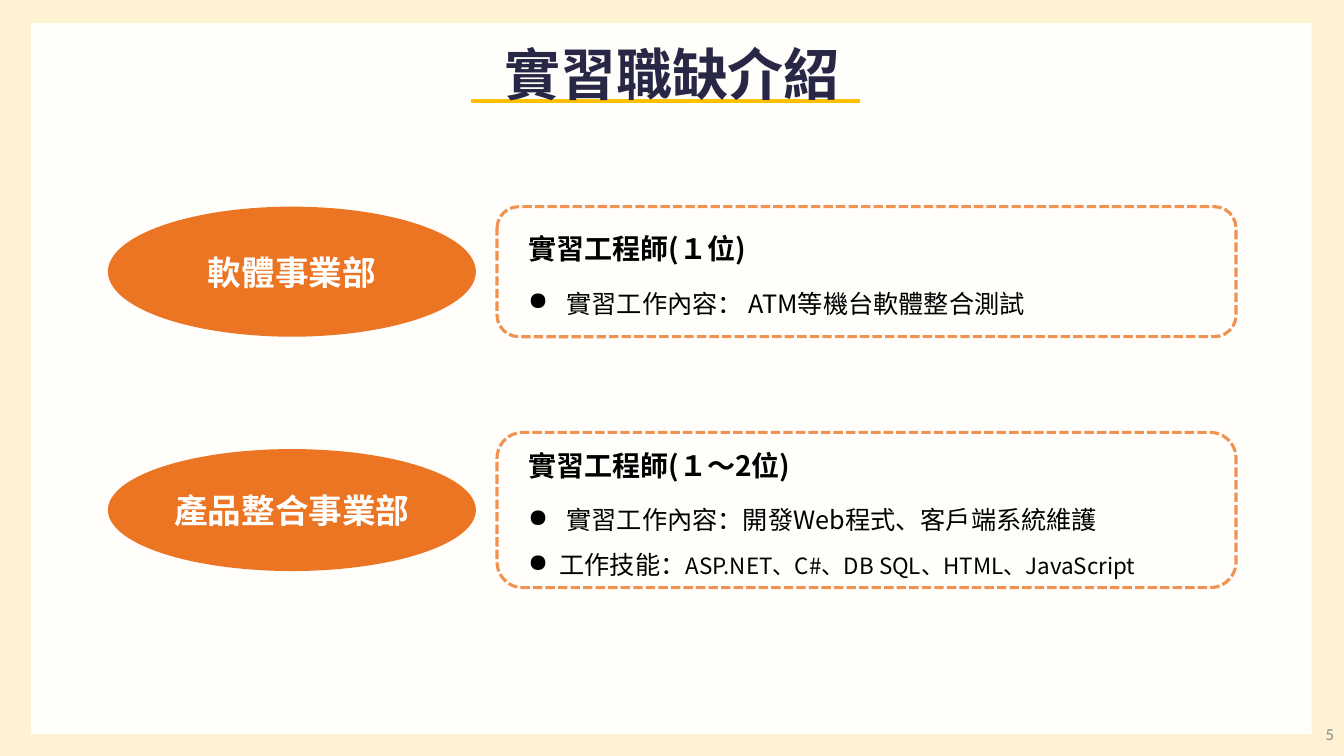
from lxml.etree import SubElement
from pptx import Presentation
from pptx.dml.color import RGBColor
from pptx.enum.dml import MSO_LINE
from pptx.enum.shapes import MSO_CONNECTOR, MSO_SHAPE
from pptx.enum.text import MSO_ANCHOR, PP_ALIGN
from pptx.oxml.ns import qn
from pptx.util import Inches, Pt

CREAM = RGBColor(0xFD, 0xF2, 0xD1)
IVORY = RGBColor(0xFF, 0xFE, 0xFA)
NAVY = RGBColor(0x28, 0x28, 0x46)
GOLD = RGBColor(0xFF, 0xC0, 0x00)
ORANGE = RGBColor(0xEC, 0x75, 0x24)
PEACH = RGBColor(0xF0, 0x92, 0x52)
GRAY = RGBColor(0x8C, 0x8C, 0x8C)
BLACK = RGBColor(0, 0, 0)
WHITE = RGBColor(0xFF, 0xFF, 0xFF)
SANS = "Noto Sans CJK SC"

ROLES = [
    (2.05, 1.29, 1.29, 0.14, "軟體事業部", "實習工程師(１位)", [
        (0.38, [("實習工作內容： ATM等機台軟體整合測試", 18)]),
    ]),
    (4.29, 1.54, 1.21, 0.05, "產品整合事業部", "實習工程師(１～2位)", [
        (0.38, [("實習工作內容：開發Web程式、客戶端系統維護", 18)]),
        (0.31, [("工作技能：", 18),
                ("ASP.NET、C#、DB SQL、HTML、JavaScript", 16)]),
    ]),
]


def add_run(para, text, size, color, bold=False, face=SANS):
    """Append one styled run, with the same face for Latin and CJK text."""
    run = para.add_run()
    run.text = text
    font = run.font
    font.size, font.bold, font.name = Pt(size), bold, face
    font.color.rgb = color
    SubElement(font._element, qn("a:ea")).set("typeface", face)


def add_box(slide, left, top, width, height):
    """Add a wrapping text box and return its frame."""
    box = slide.shapes.add_textbox(
        Inches(left), Inches(top), Inches(width), Inches(height))
    box.text_frame.word_wrap = True
    return box.text_frame


def add_form(slide, kind, left, top, width, height, color=None):
    """Add a flat shape without outline, filled when a colour is given."""
    form = slide.shapes.add_shape(
        kind, Inches(left), Inches(top), Inches(width), Inches(height))
    form.shadow.inherit = False
    form.line.fill.background()
    if color is None:
        form.fill.background()
    else:
        form.fill.solid()
        form.fill.fore_color.rgb = color
    return form


def add_base(slide):
    """Paint the backdrop, the inner panel and the page number."""
    fill = slide.background.fill
    fill.solid()
    fill.fore_color.rgb = CREAM
    add_form(slide, MSO_SHAPE.RECTANGLE, 0.31, 0.23, 12.7, 7.05, IVORY)
    frame = add_box(slide, 10.33, 7.08, 3, 0.4)
    frame.vertical_anchor = MSO_ANCHOR.MIDDLE
    para = frame.paragraphs[0]
    para.alignment = PP_ALIGN.RIGHT
    add_run(para, "5", 12, GRAY, face="Calibri")


def add_title(slide, left, top, width, height, text):
    """Place the underlined heading in its box."""
    rule = slide.shapes.add_connector(
        MSO_CONNECTOR.STRAIGHT, Inches(left + 0.83), Inches(top + 0.66),
        Inches(left + 4.69), Inches(top + 0.66))
    rule.line.color.rgb = GOLD
    rule.line.width = Pt(3)
    SubElement(rule._element.spPr, qn("a:effectLst"))
    para = add_box(slide, left, top, width, height).paragraphs[0]
    para.alignment = PP_ALIGN.CENTER
    add_run(para, text, 40, NAVY, True)


def add_point(frame, indent, parts):
    """Append one bulleted paragraph with a hanging indent."""
    para = frame.add_paragraph()
    para.line_spacing = Pt(32)
    props = para._p.get_or_add_pPr()
    props.set("marL", str(Inches(indent)))
    props.set("indent", str(-Inches(indent)))
    SubElement(props, qn("a:buChar")).set("char", "●")
    for text, size in parts:
        add_run(para, text, size, BLACK)


def add_role(slide, left, top, height, tall, inset, unit, post, points):
    """Draw a unit's oval beside the dashed card of its opening."""
    oval = add_form(slide, MSO_SHAPE.OVAL, left, top + (height - tall) / 2,
                    3.65, tall, ORANGE)
    oval.text_frame.vertical_anchor = MSO_ANCHOR.MIDDLE
    label = oval.text_frame.paragraphs[0]
    label.alignment = PP_ALIGN.CENTER
    add_run(label, unit, 24, WHITE, True)

    frame = add_box(slide, left + 4.07, top + inset, 7.12, height - 2 * inset)
    head = frame.paragraphs[0]
    head.line_spacing, head.space_after = Pt(28), Pt(6)
    add_run(head, post, 20, BLACK, True)
    for indent, parts in points:
        add_point(frame, indent, parts)

    card = add_form(slide, MSO_SHAPE.ROUNDED_RECTANGLE,
                    left + 3.86, top, 7.33, height)
    card.line.color.rgb = PEACH
    card.line.width = Pt(2.25)
    card.line.dash_style = MSO_LINE.SQUARE_DOT


def main():
    """Build the slide and save it."""
    deck = Presentation()
    deck.slide_width, deck.slide_height = Inches(13.33), Inches(7.5)
    slide = deck.slides.add_slide(deck.slide_layouts[6])
    add_base(slide)
    add_title(slide, 3.84, 0.34, 5.65, 0.77, "實習職缺介紹")
    for role in ROLES:
        add_role(slide, 1.07, *role)
    deck.save("out.pptx")


if __name__ == "__main__":
    main()
